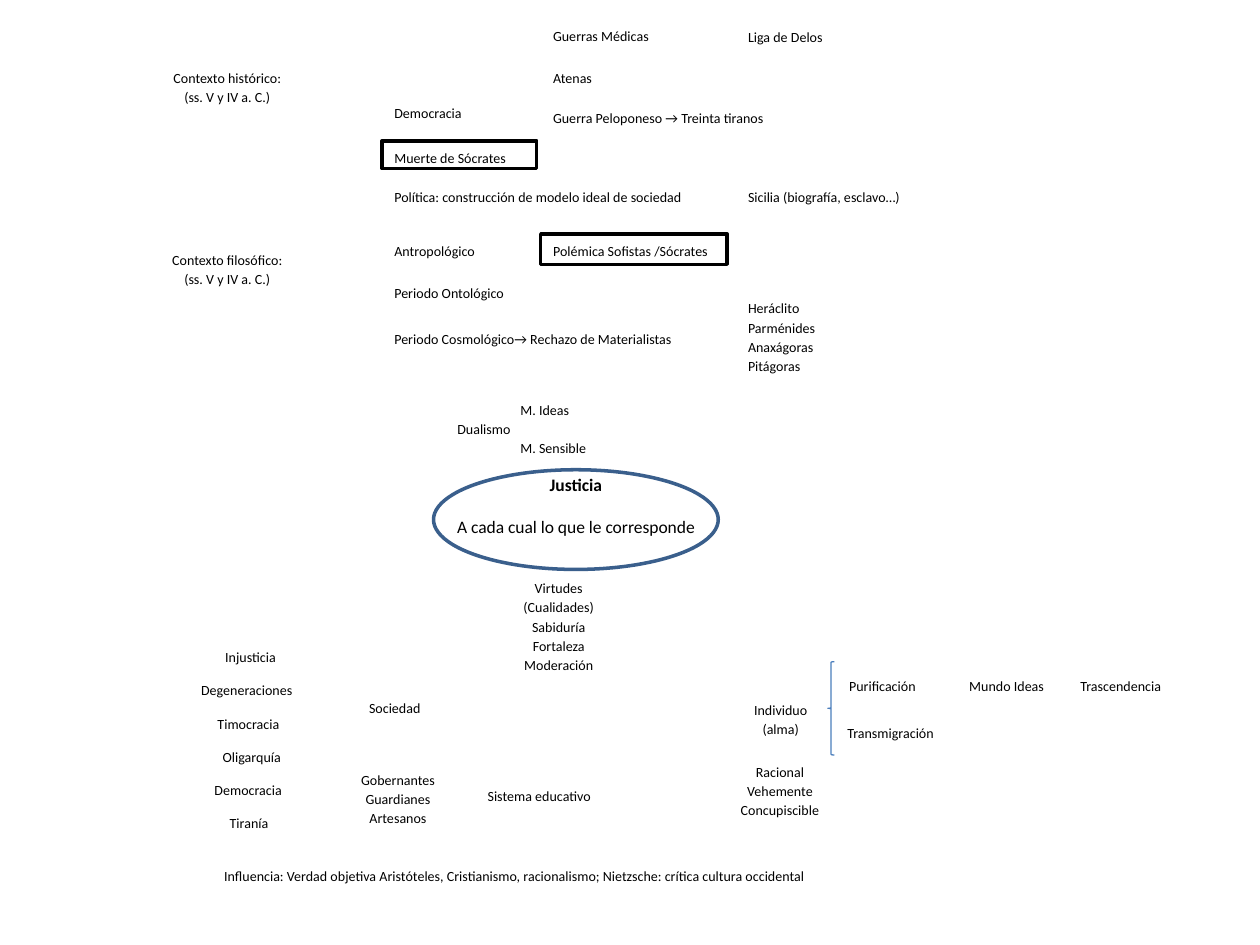
from pptx import Presentation
from pptx.dml.color import RGBColor
from pptx.enum.shapes import MSO_SHAPE
from pptx.enum.text import MSO_ANCHOR, MSO_AUTO_SIZE, PP_ALIGN
from pptx.util import Cm, Pt

CENTER, JUSTIFY = PP_ALIGN.CENTER, PP_ALIGN.JUSTIFY
RECTANGLE, OVAL, BRACE = MSO_SHAPE.RECTANGLE, MSO_SHAPE.OVAL, MSO_SHAPE.LEFT_BRACE
TOP, GROW, FIXED = MSO_ANCHOR.TOP, MSO_AUTO_SIZE.SHAPE_TO_FIT_TEXT, MSO_AUTO_SIZE.NONE
FONT, BLACK, WHITE = "Calibri", "000000", "FFFFFF"
OVAL_BLUE, BRACE_BLUE = "3A5F8C", "4B7EBC"

# Content: text, left, top, width, height (cm)
TOPIC, DETAIL, REMARK = 7.7, 10.9, 14.83  # left edges of the context columns
HEADINGS = [
    ("Contexto histórico:\n(ss. V y IV a. C.)", 3.2, 1.22, 2.77, 1.02),
    ("Contexto filosófico:\n(ss. V y IV a. C.)", 2.87, 4.9, 3.43, 1.07),
]
CONTEXT = [
    ("Guerras Médicas", DETAIL, 0.38, 2.64, 0.61),
    ("Liga de Delos", REMARK, 0.4, 2.24, 0.61),
    ("Atenas", DETAIL, 1.22, 1.37, 0.64),
    ("Democracia", TOPIC, 1.93, 2.13, 0.66),
    ("Guerra Peloponeso → Treinta tiranos", DETAIL, 2.03, 5.59, 0.66),
    ("Política: construcción de modelo ideal de sociedad", TOPIC, 3.63, 6.63, 0.51),
    ("Sicilia (biografía, esclavo…)", REMARK, 3.63, 3.78, 0.51),
    ("Antropológico", TOPIC, 4.72, 2.21, 0.61),
    ("Periodo Ontológico", TOPIC, 5.56, 2.82, 0.61),
    ("Periodo Cosmológico→ Rechazo de Materialistas", TOPIC, 6.48, 6.6, 0.61),
]
PHILOSOPHERS = ("Heráclito\nParménides\nAnaxágoras\nPitágoras", REMARK, 5.87, 1.98, 1.85)
FRAMED = [
    ("Muerte de Sócrates", TOPIC, 2.84, 3.12, 0.56),
    ("Polémica Sofistas /Sócrates", DETAIL, 4.72, 3.76, 0.61),
]
NOTES = [
    ("Sociedad", 7.19, 13.92, 1.7, 0.71),
    ("Sistema educativo", 9.58, 15.7, 3.02, 0.76),
    ("Influencia: Verdad objetiva Aristóteles, Cristianismo, racionalismo; "
     "Nietzsche: crítica cultura occidental", 4.27, 17.32, 13.97, 0.71),
]
DUALISM = ("\tM. Ideas\nDualismo\n\tM. Sensible", 8.97, 7.92, 4.6, 1.45)
LISTS = [
    ("Gobernantes\nGuardianes\nArtesanos", 6.83, 15.37, 2.39, 1.45),
    ("Racional\nVehemente\nConcupiscible", 14.53, 15.21, 2.39, 1.45),
    ("Virtudes\n(Cualidades)\nSabiduría\nFortaleza\nModeración", 10.11, 11.51, 2.31, 2.24),
]
SOUL = [
    ("Individuo\n(alma)", 14.76, 13.97, 1.96, 0.99),
    ("Purificación", 16.81, 13.49, 1.96, 0.58),
    ("Mundo Ideas", 19.1, 13.49, 2.39, 0.58),
    ("Trascendencia", 21.49, 13.49, 2.21, 0.58),
    ("Transmigración", 16.81, 14.43, 2.29, 0.58),
]
DECLINE = [("Injusticia", 1.6), ("Degeneraciones", 2.57), ("Timocracia", 1.91),
           ("Oligarquía", 1.7), ("Democracia", 2.03), ("Tiranía", 1.42)]
DECLINE_CENTER, DECLINE_TOP, DECLINE_STEP = 5.09, 12.9, 0.67
JUSTICE = ("Justicia\nA cada cual lo que le corresponde", 8.79, 9.37, 5.64, 1.6)


def color(value):
    return RGBColor.from_string(value)


def write(box, text, align=JUSTIFY, size=8, after=0, last_after=0, grow=False, bold_first=False):
    frame = box.text_frame
    frame.word_wrap = True
    frame.vertical_anchor = TOP
    frame.auto_size = GROW if grow else FIXED
    lines = text.split("\n")
    for index, line in enumerate(lines):
        para = frame.paragraphs[0] if index == 0 else frame.add_paragraph()
        para.alignment = align
        para.line_spacing = 1.15
        para.space_after = Pt(last_after if index == len(lines) - 1 else after)
        span = para.add_run()
        span.text = line
        span.font.name = FONT
        span.font.size = Pt(size)
        span.font.bold = bold_first and index == 0
        span.font.color.rgb = color(BLACK)


def add_outline(shapes, kind, left, top, width, height, fill=None, line=None, weight=2):
    shape = shapes.add_shape(kind, Cm(left), Cm(top), Cm(width), Cm(height))
    shape.shadow.inherit = False
    if fill:
        shape.fill.solid()
        shape.fill.fore_color.rgb = color(fill)
    else:
        shape.fill.background()
    if line:
        shape.line.color.rgb = color(line)
        shape.line.width = Pt(weight)
    else:
        shape.line.fill.background()
    return shape


def add_label(shapes, item, **form):
    text, *place = item
    write(shapes.add_textbox(*map(Cm, place)), text, **form)


def add_panel(shapes, item, fill=WHITE, line=None, **form):
    text, *place = item
    write(add_outline(shapes, RECTANGLE, *place, fill=fill, line=line), text, **form)


def main():
    deck = Presentation()
    deck.slide_width, deck.slide_height = Cm(25.4), Cm(19.05)
    page = deck.slides.add_slide(deck.slide_layouts[6])
    shapes = page.shapes

    # Historical and philosophical context
    for item in HEADINGS:
        add_label(shapes, item, align=CENTER, last_after=10)
    for item in CONTEXT:
        add_label(shapes, item, last_after=10)
    add_label(shapes, PHILOSOPHERS)
    for item in FRAMED:
        add_panel(shapes, item, fill=None, line=BLACK, last_after=10)

    # Society, education and virtues
    for item in NOTES:
        add_panel(shapes, item, last_after=10)
    for item in LISTS:
        add_panel(shapes, item, align=CENTER, grow=True)
    add_panel(shapes, DUALISM, grow=True)

    # Justice at the centre
    justice = shapes.add_group_shape().shapes
    add_label(justice, JUSTICE, align=CENTER, size=10, after=10, last_after=10,
              grow=True, bold_first=True)
    add_outline(justice, OVAL, 8.74, 9.47, 5.74, 2.01, line=OVAL_BLUE)

    # The soul and its destiny
    for item in SOUL:
        add_panel(shapes, item, align=CENTER)
    add_outline(shapes, BRACE, 16.69, 13.34, 0.13, 1.88, line=BRACE_BLUE, weight=0.75)

    # Decline of the state
    for row, (name, width) in enumerate(DECLINE):
        left = DECLINE_CENTER - width / 2
        top = DECLINE_TOP + row * DECLINE_STEP
        add_panel(shapes, (name, left, top, width, 0.71), last_after=10)

    deck.save("out.pptx")


if __name__ == "__main__":
    main()
